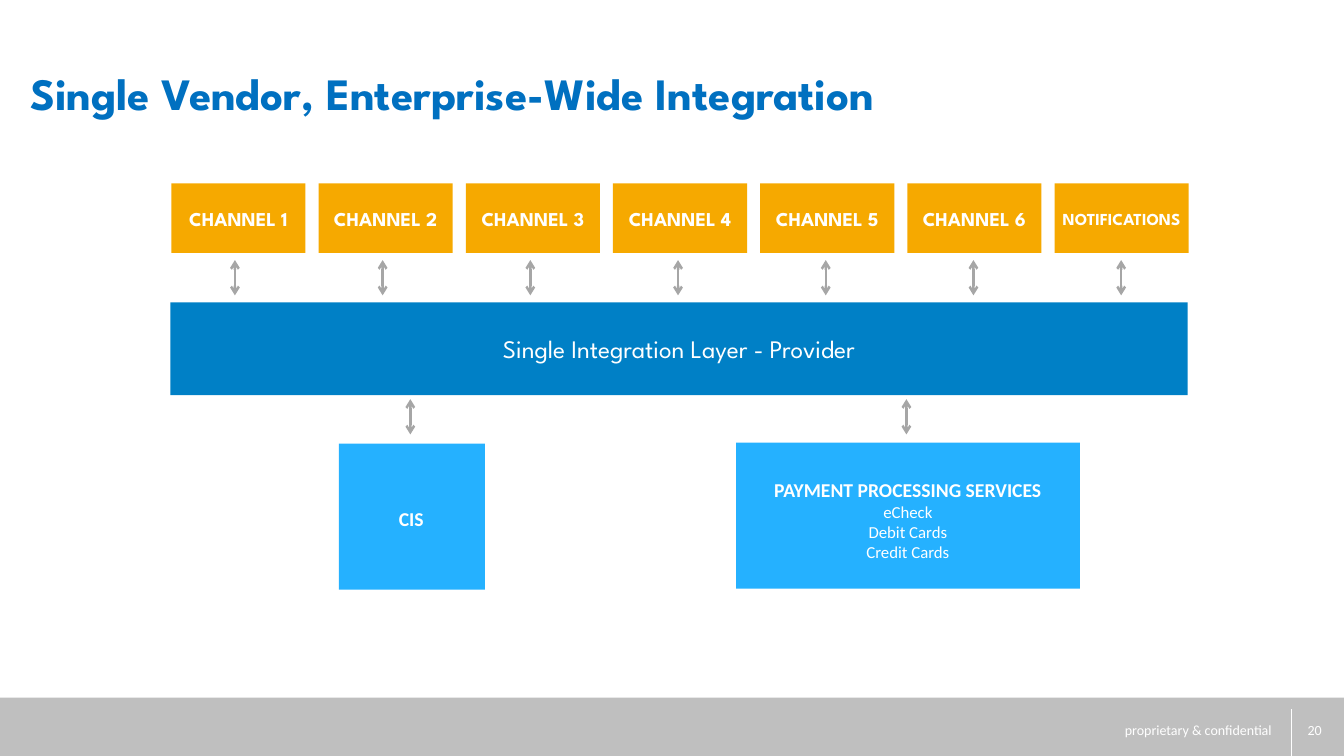
from dataclasses import dataclass

from lxml.etree import SubElement
from pptx import Presentation
from pptx.dml.color import RGBColor
from pptx.enum.shapes import MSO_CONNECTOR, MSO_SHAPE
from pptx.enum.text import MSO_ANCHOR, PP_ALIGN
from pptx.oxml.ns import qn
from pptx.shapes.autoshape import Shape
from pptx.shapes.connector import Connector
from pptx.slide import Slide
from pptx.util import Inches, Pt

CELL = Inches(0.1)
SLIDE_COLUMNS = 133.3
SLIDE_ROWS = 75

WHITE = RGBColor(0xFF, 0xFF, 0xFF)
TITLE_BLUE = RGBColor(0x00, 0x70, 0xC0)
LAYER_BLUE = RGBColor(0x00, 0x80, 0xC6)
SERVICE_BLUE = RGBColor(0x25, 0xB1, 0xFF)
CHANNEL_ORANGE = RGBColor(0xF6, 0xA9, 0x00)
ARROW_GRAY = RGBColor(0xA6, 0xA6, 0xA6)
FOOTER_GRAY = RGBColor(0xBF, 0xBF, 0xBF)

HEADING_FONT = "League Spartan"
BODY_FONT = "Calibri"

CHANNELS = [f"CHANNEL {number}" for number in range(1, 7)] + ["NOTIFICATIONS"]
CHANNEL_LEFT = 17
CHANNEL_WIDTH = 13.3
CHANNEL_PITCH = 14.6
LABEL_WIDTH = 14.4
ARROW_LEFT = 23.3
ARROW_PITCH = 14.65


@dataclass(frozen=True)
class Area:
    column: float
    row: float
    columns: float
    rows: float


@dataclass(frozen=True)
class Line:
    text: str
    size: float
    font: str = BODY_FONT
    bold: bool = False
    color: RGBColor = WHITE


@dataclass(frozen=True)
class Label:
    area: Area
    lines: tuple[Line, ...]
    alignment: PP_ALIGN = PP_ALIGN.CENTER
    anchor: MSO_ANCHOR = MSO_ANCHOR.TOP
    wrap: bool = False


@dataclass(frozen=True)
class Arrow:
    column: float
    top: float
    bottom: float


SERVICE_LABELS = [
    Label(Area(32.5, 49.8, 16.6, 3.1), (Line("CIS", 14, bold=True),)),
    Label(
        Area(64.8, 46.9, 50.5, 12),
        (
            Line("PAYMENT PROCESSING SERVICES", 14, bold=True),
            Line("eCheck", 12),
            Line("Debit Cards", 12),
            Line("Credit Cards", 12),
        ),
    ),
]
FOOTER_LABELS = [
    Label(
        Area(109, 70.4, 19.7, 4),
        (Line("proprietary & confidential", 10),),
        anchor=MSO_ANCHOR.MIDDLE,
        wrap=True,
    ),
    Label(Area(128.7, 71.1, 3.7, 2.7), (Line("20", 10),), PP_ALIGN.LEFT),
]
TITLE = Label(
    Area(2, 5.2, 131.3, 7.8),
    (Line("Single Vendor, Enterprise-Wide Integration", 32, HEADING_FONT, True, TITLE_BLUE),),
    PP_ALIGN.LEFT,
    wrap=True,
)
LAYER_LINE = Line("Single Integration Layer - Provider", 18, HEADING_FONT)


def cells(count: float) -> int:
    return round(count * CELL)


def bounds(area: Area) -> tuple[int, int, int, int]:
    return cells(area.column), cells(area.row), cells(area.columns), cells(area.rows)


def write_lines(shape: Shape, lines: tuple[Line, ...], alignment: PP_ALIGN) -> None:
    text_frame = shape.text_frame
    text_frame.text = "\n".join(line.text for line in lines)
    for paragraph, line in zip(text_frame.paragraphs, lines):
        paragraph.alignment = alignment
        paragraph.font.name = line.font
        paragraph.font.size = Pt(line.size)
        paragraph.font.bold = line.bold
        paragraph.font.color.rgb = line.color


def add_block(slide: Slide, area: Area, color: RGBColor) -> Shape:
    block = slide.shapes.add_shape(MSO_SHAPE.RECTANGLE, *bounds(area))
    block.shadow.inherit = False
    block.fill.solid()
    block.fill.fore_color.rgb = color
    block.line.fill.background()
    return block


def add_label(slide: Slide, label: Label) -> Shape:
    box = slide.shapes.add_textbox(*bounds(label.area))
    box.text_frame.word_wrap = label.wrap
    box.text_frame.vertical_anchor = label.anchor
    write_lines(box, label.lines, label.alignment)
    return box


def add_vertical(slide: Slide, span: Arrow, color: RGBColor, width: float) -> Connector:
    column = cells(span.column)
    connector = slide.shapes.add_connector(
        MSO_CONNECTOR.STRAIGHT, column, cells(span.bottom), column, cells(span.top)
    )
    connector.line.color.rgb = color
    connector.line.width = Pt(width)
    SubElement(connector.element.spPr, qn("a:effectLst"))
    return connector


def add_arrow(slide: Slide, arrow: Arrow) -> None:
    connector = add_vertical(slide, arrow, ARROW_GRAY, 1.75)
    outline = connector.line._get_or_add_ln()
    for end in ("a:headEnd", "a:tailEnd"):
        SubElement(outline, qn(end), type="arrow")


def add_footer(slide: Slide) -> None:
    add_block(slide, Area(0, 69.2, SLIDE_COLUMNS, 5.8), FOOTER_GRAY)
    add_vertical(slide, Arrow(128.1, 70.3, SLIDE_ROWS), WHITE, 1)
    for label in FOOTER_LABELS:
        add_label(slide, label)


def add_channels(slide: Slide) -> None:
    for index, name in enumerate(CHANNELS):
        left = CHANNEL_LEFT + index * CHANNEL_PITCH
        add_block(slide, Area(left, 18.2, CHANNEL_WIDTH, 6.9), CHANNEL_ORANGE)
        label_left = left + (CHANNEL_WIDTH - LABEL_WIDTH) / 2
        size = 12 if name == "NOTIFICATIONS" else 14
        line = Line(name, size, HEADING_FONT, True)
        area = Area(label_left, 20, LABEL_WIDTH, 3.4)
        add_label(slide, Label(area, (line,), anchor=MSO_ANCHOR.MIDDLE, wrap=True))
        add_arrow(slide, Arrow(ARROW_LEFT + index * ARROW_PITCH, 25.8, 29.3))


def add_services(slide: Slide) -> None:
    layer = add_block(slide, Area(16.9, 30, 100.9, 9.2), LAYER_BLUE)
    layer.text_frame.vertical_anchor = MSO_ANCHOR.MIDDLE
    write_lines(layer, (LAYER_LINE,), PP_ALIGN.CENTER)
    for area in (Area(33.6, 44, 14.5, 14.5), Area(73, 43.9, 34.1, 14.5)):
        add_block(slide, area, SERVICE_BLUE)
    for label in SERVICE_LABELS:
        add_label(slide, label)
    for column in (40.7, 89.9):
        add_arrow(slide, Arrow(column, 39.6, 43.1))


def main() -> None:
    presentation = Presentation()
    presentation.slide_width = cells(SLIDE_COLUMNS)
    presentation.slide_height = cells(SLIDE_ROWS)
    slide = presentation.slides.add_slide(presentation.slide_layouts[6])
    add_footer(slide)
    add_channels(slide)
    add_services(slide)
    title = add_label(slide, TITLE)
    title.text_frame.margin_top = cells(1.9)
    title.text_frame.paragraphs[0].line_spacing = 0.9
    presentation.save("out.pptx")


if __name__ == "__main__":
    main()
